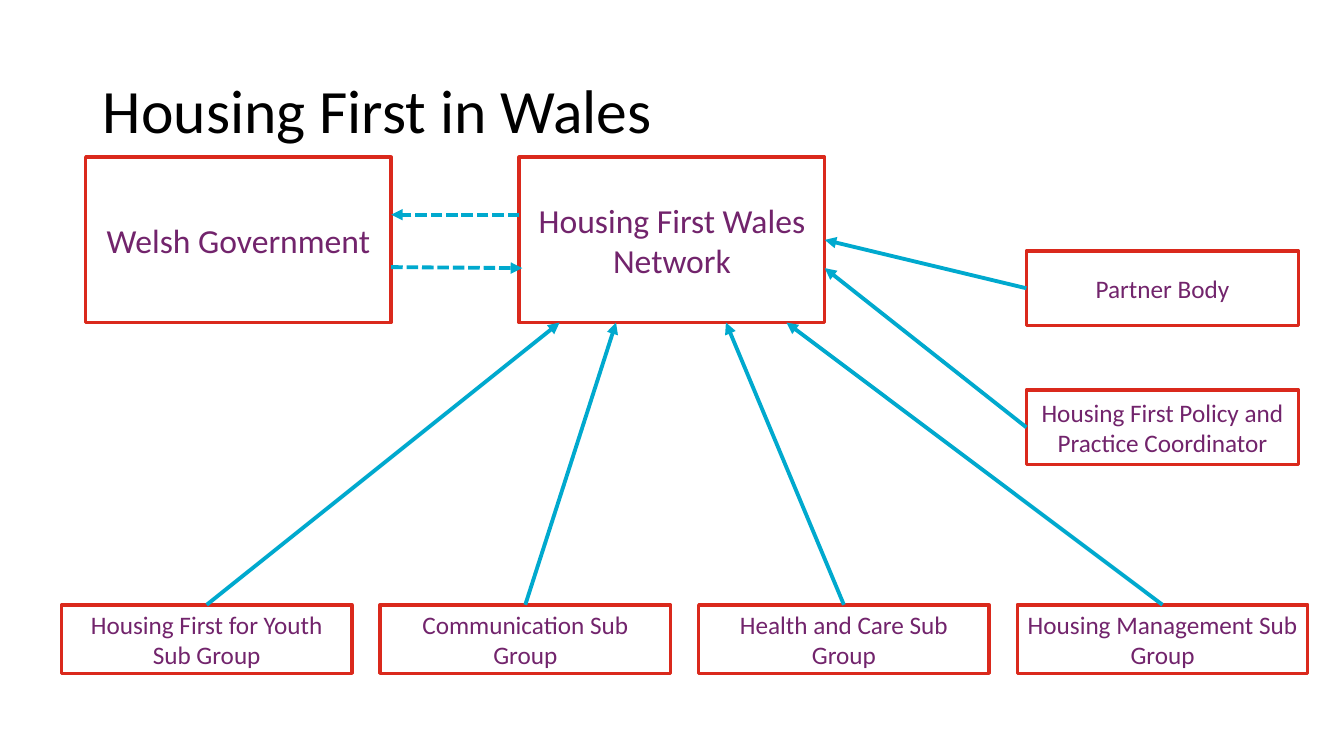
from dataclasses import dataclass

from lxml.etree import SubElement
from pptx import Presentation
from pptx.dml.color import RGBColor
from pptx.enum.dml import MSO_LINE
from pptx.enum.shapes import MSO_CONNECTOR, MSO_SHAPE
from pptx.enum.text import MSO_ANCHOR, MSO_AUTO_SIZE, PP_ALIGN
from pptx.oxml.ns import qn
from pptx.util import Inches, Pt


@dataclass(frozen=True)
class Theme:
    font: str = "Calibri"
    title_color: RGBColor = RGBColor(0x00, 0x00, 0x00)
    text_color: RGBColor = RGBColor(0x72, 0x24, 0x6C)
    border_color: RGBColor = RGBColor(0xDA, 0x29, 0x1C)
    arrow_color: RGBColor = RGBColor(0x00, 0xA9, 0xCE)
    title_size: Pt = Pt(44)
    large_size: Pt = Pt(24)
    small_size: Pt = Pt(18)
    border_width: Pt = Pt(2.5)
    arrow_width: Pt = Pt(2.75)


THEME = Theme()
TOP, LEFT = 0, 1  # connection sites of a rectangle

MAIN_TOP, MAIN_WIDTH, MAIN_HEIGHT = 1.56, 3.03, 1.64
GOVERNMENT_LEFT, NETWORK_LEFT = 0.85, 5.15
GOVERNMENT_RIGHT = GOVERNMENT_LEFT + MAIN_WIDTH
NETWORK_RIGHT = NETWORK_LEFT + MAIN_WIDTH
NETWORK_BOTTOM = MAIN_TOP + MAIN_HEIGHT

PARTNER_LEFT, PARTNER_TOP, PARTNER_STEP = 10.18, 2.49, 1.38
PARTNER_WIDTH, PARTNER_HEIGHT = 2.7, 0.74
GROUP_LEFT, GROUP_TOP, GROUP_STEP = 0.61, 6, 3.16
GROUP_WIDTH, GROUP_HEIGHT = 2.88, 0.68

# Name and the height at which its arrow meets the network box
PARTNERS = [
    ("Partner Body", 2.38),
    ("Housing First Policy and Practice Coordinator", 2.66),
]
# Name and the horizontal position at which its arrow meets the network box
SUB_GROUPS = [
    ("Housing First for Youth Sub Group", 5.55),
    ("Communication Sub Group", 6.11),
    ("Health and Care Sub Group", 7.2),
    ("Housing Management Sub Group", 7.8),
]


def style_paragraph(paragraph, size, color, alignment):
    paragraph.alignment = alignment
    paragraph.font.name = THEME.font
    paragraph.font.size = size
    paragraph.font.color.rgb = color


def set_title(slide, text):
    title = slide.shapes.title
    title.left, title.top = Inches(0.92), Inches(0.4)
    title.width, title.height = Inches(11.5), Inches(1.45)
    frame = title.text_frame
    frame.text = text
    frame.auto_size = MSO_AUTO_SIZE.NONE
    frame.vertical_anchor = MSO_ANCHOR.MIDDLE
    paragraph = frame.paragraphs[0]
    paragraph.line_spacing = 0.9
    style_paragraph(paragraph, THEME.title_size, THEME.title_color, PP_ALIGN.LEFT)


def add_box(slide, text, left, top, width, height, size):
    box = slide.shapes.add_shape(
        MSO_SHAPE.RECTANGLE, Inches(left), Inches(top), Inches(width), Inches(height))
    box.shadow.inherit = False
    box.fill.background()
    box.line.color.rgb = THEME.border_color
    box.line.width = THEME.border_width
    frame = box.text_frame
    frame.text = text
    frame.word_wrap = True
    frame.vertical_anchor = MSO_ANCHOR.MIDDLE
    style_paragraph(frame.paragraphs[0], size, THEME.text_color, PP_ALIGN.CENTER)
    return box


def add_arrow(slide, start, end, dashed=False):
    arrow = slide.shapes.add_connector(
        MSO_CONNECTOR.STRAIGHT, *(Inches(value) for value in (*start, *end)))
    arrow.line.color.rgb = THEME.arrow_color
    arrow.line.width = THEME.arrow_width
    if dashed:
        arrow.line.dash_style = MSO_LINE.SQUARE_DOT
    properties = arrow.element.spPr
    SubElement(properties.find(qn("a:ln")), qn("a:tailEnd"), type="triangle")
    SubElement(properties, qn("a:effectLst"))
    return arrow


def add_main_boxes(slide):
    for text, left in (("Welsh Government", GOVERNMENT_LEFT),
                       ("Housing First Wales Network", NETWORK_LEFT)):
        add_box(slide, text, left, MAIN_TOP, MAIN_WIDTH, MAIN_HEIGHT, THEME.large_size)
    add_arrow(slide, (NETWORK_LEFT, 2.13), (GOVERNMENT_RIGHT, 2.13), dashed=True)
    add_arrow(slide, (GOVERNMENT_RIGHT, 2.65), (NETWORK_LEFT + 0.03, 2.66), dashed=True)


def add_partners(slide):
    for index, (name, target_y) in enumerate(PARTNERS):
        top = PARTNER_TOP + index * PARTNER_STEP
        box = add_box(slide, name, PARTNER_LEFT, top,
                      PARTNER_WIDTH, PARTNER_HEIGHT, THEME.small_size)
        arrow = add_arrow(slide, (PARTNER_LEFT, top + PARTNER_HEIGHT / 2),
                          (NETWORK_RIGHT, target_y))
        arrow.begin_connect(box, LEFT)


def add_sub_groups(slide):
    for index, (name, target_x) in enumerate(SUB_GROUPS):
        left = GROUP_LEFT + index * GROUP_STEP
        box = add_box(slide, name, left, GROUP_TOP,
                      GROUP_WIDTH, GROUP_HEIGHT, THEME.small_size)
        arrow = add_arrow(slide, (left + GROUP_WIDTH / 2, GROUP_TOP),
                          (target_x, NETWORK_BOTTOM))
        arrow.begin_connect(box, TOP)


def main():
    presentation = Presentation()
    presentation.slide_width, presentation.slide_height = Inches(13.33), Inches(7.5)
    title_only = presentation.slide_layouts[5]
    slide = presentation.slides.add_slide(title_only)
    set_title(slide, "Housing First in Wales")
    add_main_boxes(slide)
    add_partners(slide)
    add_sub_groups(slide)
    presentation.save("out.pptx")


if __name__ == "__main__":
    main()
